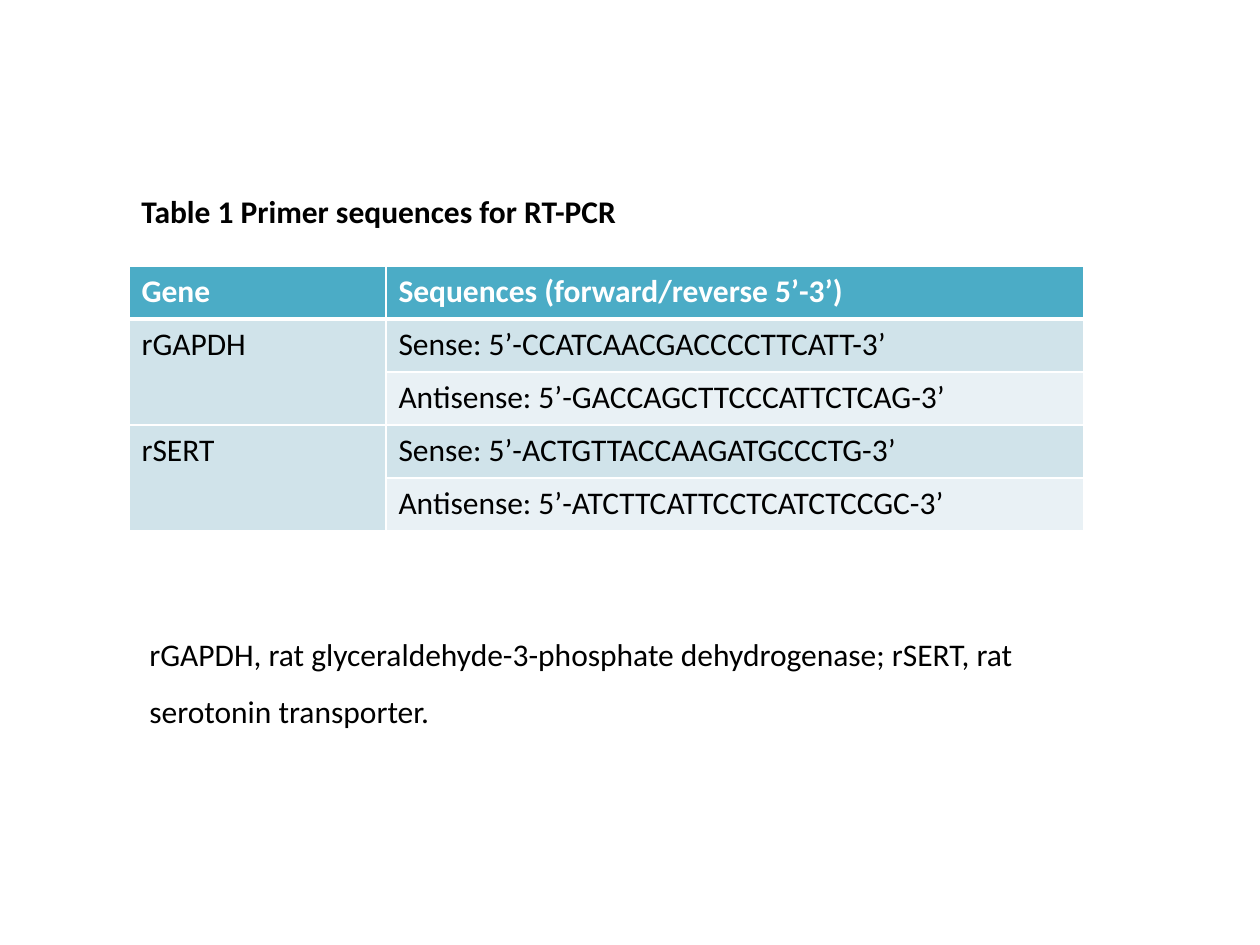
from lxml import etree
from pptx import Presentation
from pptx.dml.color import RGBColor
from pptx.oxml.ns import qn
from pptx.util import Emu, Pt

TITLE = "Table 1 Primer sequences for RT-PCR"
HEADER = ("Gene", "Sequences (forward/reverse 5’-3’)")
GENES = [
    ("rGAPDH", ["Sense: 5’-CCATCAACGACCCCTTCATT-3’",
                "Antisense: 5’-GACCAGCTTCCCATTCTCAG-3’"]),
    ("rSERT", ["Sense: 5’-ACTGTTACCAAGATGCCCTG-3’",
               "Antisense: 5’-ATCTTCATTCCTCATCTCCGC-3’"]),
]
NOTE = ("rGAPDH, rat glyceraldehyde-3-phosphate dehydrogenase; "
        "rSERT, rat serotonin transporter.")

WHITE = RGBColor(0xFF, 0xFF, 0xFF)
BLACK = RGBColor(0, 0, 0)
TEAL = RGBColor(0x4B, 0xAC, 0xC6)
BANDS = (RGBColor(0xD0, 0xE3, 0xEA), RGBColor(0xE9, 0xF1, 0xF5))

PX = 914400 // 126
TITLE_BOX = (129, 186, 808, 89)
NOTE_BOX = (137, 610, 935, 121)
TABLE_LEFT, TABLE_TOP = 129, 266
COL_WIDTHS = (257, 698)
ROW_HEIGHT = 53


def px(n):
    return Emu(n * PX)


def write(tf, text, color=BLACK, bold=False, spacing=None):
    p = tf.paragraphs[0]
    p.line_spacing = spacing
    r = p.add_run()
    r.text = text
    r.font.name = "Calibri"
    r.font.size = Pt(18)
    r.font.bold = bold
    r.font.color.rgb = color


def add_text(slide, box, text, **fmt):
    tf = slide.shapes.add_textbox(*map(px, box)).text_frame
    tf.word_wrap = True
    write(tf, text, **fmt)


def set_borders(cell, **widths):
    """Draw white borders; widths maps L, R, T and B to points."""
    tc_pr = cell._tc.get_or_add_tcPr()
    for i, (side, width) in enumerate(widths.items()):
        ln = etree.Element(qn(f"a:ln{side}"), w=str(Pt(width)))
        fill = etree.SubElement(ln, qn("a:solidFill"))
        etree.SubElement(fill, qn("a:srgbClr"), val=str(WHITE))
        tc_pr.insert(i, ln)


def fill_cell(cell, text, fill, **fmt):
    cell.fill.solid()
    cell.fill.fore_color.rgb = fill
    if text:
        write(cell.text_frame, text, **fmt)


def add_primer_table(slide):
    n_rows = 1 + sum(len(seqs) for _, seqs in GENES)
    table = slide.shapes.add_table(
        n_rows, len(COL_WIDTHS), px(TABLE_LEFT), px(TABLE_TOP),
        px(sum(COL_WIDTHS)), px(ROW_HEIGHT * n_rows)).table
    for col, width in zip(table.columns, COL_WIDTHS):
        col.width = px(width)
    for row in table.rows:
        row.height = px(ROW_HEIGHT)

    for c, text in enumerate(HEADER):
        fill_cell(table.cell(0, c), text, TEAL, color=WHITE, bold=True)
    top = 1
    for gene, seqs in GENES:
        for i, seq in enumerate(seqs):
            fill_cell(table.cell(top + i, 0), "" if i else gene, BANDS[0])
            fill_cell(table.cell(top + i, 1), seq, BANDS[i % 2])
        table.cell(top, 0).merge(table.cell(top + len(seqs) - 1, 0))
        top += len(seqs)

    for r in range(n_rows):
        for c in range(len(COL_WIDTHS)):
            set_borders(table.cell(r, c), L=1, R=1,
                        T=3 if r == 1 else 1, B=3 if r == 0 else 1)


def main():
    prs = Presentation()
    prs.slide_width, prs.slide_height = px(1260), px(945)
    slide = prs.slides.add_slide(prs.slide_layouts[6])
    add_text(slide, TITLE_BOX, TITLE, bold=True)
    add_primer_table(slide)
    add_text(slide, NOTE_BOX, NOTE, spacing=1.5)
    prs.save("out.pptx")


if __name__ == "__main__":
    main()
